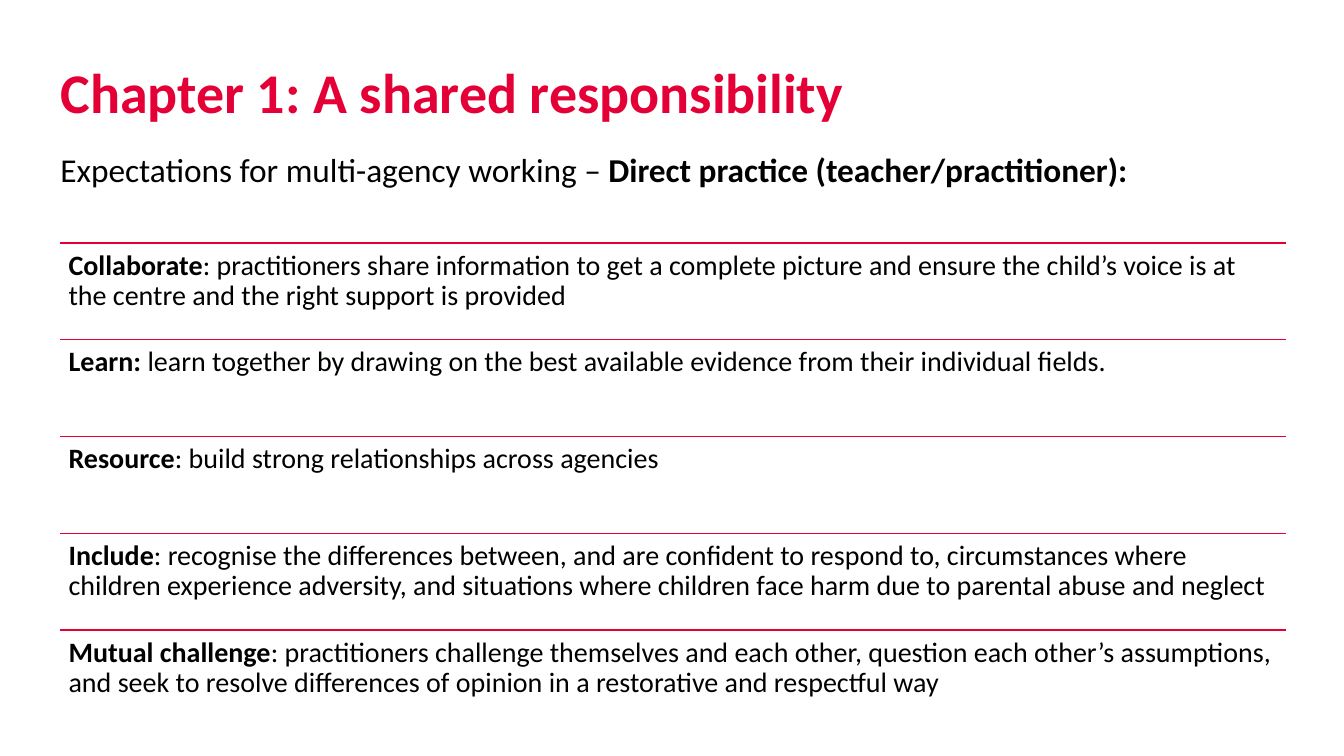
import pptx
import pptx.dml.color
import pptx.enum.shapes
import pptx.enum.text
import pptx.util
from lxml import etree
from pptx.oxml.ns import qn
from pptx.util import Inches

LEFT = 0.6
ROW_TOP, ROW_WIDTH, ROW_HEIGHT = 2.41, 12.15, 0.96

EXPECTATIONS = [
    ("Collaborate", ": practitioners share information to get a complete picture and ensure "
     "the child’s voice is at the centre and the right support is provided"),
    ("Learn: ", "learn together by drawing on the best available evidence from their "
     "individual fields."),
    ("Resource", ": build strong relationships across agencies"),
    ("Include", ": recognise the differences between, and are confident to respond to, "
     "circumstances where children experience adversity, and situations where children "
     "face harm due to parental abuse and neglect"),
    ("Mutual challenge", ": practitioners challenge themselves and each other, question "
     "each other’s assumptions, and seek to resolve differences of opinion in a "
     "restorative and respectful way"),
]


def color(value):
    return pptx.dml.color.RGBColor.from_string(value)


class SlideBuilder:
    font = "Calibri"
    accent = "E40037"
    ink = "000000"

    def __init__(self, slide):
        self.slide = slide

    def set_text(self, shape, runs, *, size, ink=None, inset=0, line_spacing=None,
                 before=0, after=0):
        """Fill a shape with one paragraph of (text, bold) runs."""
        frame = shape.text_frame
        frame.word_wrap = True
        frame.auto_size = pptx.enum.text.MSO_AUTO_SIZE.NONE
        frame.vertical_anchor = pptx.enum.text.MSO_ANCHOR.TOP
        frame.margin_left = frame.margin_right = Inches(inset)
        frame.margin_top = frame.margin_bottom = Inches(inset)
        paragraph = frame.paragraphs[0]
        paragraph.alignment = pptx.enum.text.PP_ALIGN.LEFT
        paragraph.line_spacing = line_spacing
        paragraph.space_before = pptx.util.Pt(before)
        paragraph.space_after = pptx.util.Pt(after)
        for text, bold in runs:
            run = paragraph.add_run()
            run.text = text
            run.font.name = self.font
            run.font.size = pptx.util.Pt(size)
            run.font.bold = bold
            run.font.color.rgb = color(ink or self.ink)

    def title(self, text, left, top, width, height):
        shape = self.slide.shapes.title
        shape.left, shape.top = Inches(left), Inches(top)
        shape.width, shape.height = Inches(width), Inches(height)
        self.set_text(shape, [(text, True)], size=40, ink=self.accent)

    def text(self, shapes, runs, left, top, width, height, **text_format):
        box = shapes.add_textbox(Inches(left), Inches(top), Inches(width), Inches(height))
        self.set_text(box, runs, **text_format)

    def rule(self, shapes, left, top, width):
        """Draw a horizontal accent line."""
        line = shapes.add_connector(
            pptx.enum.shapes.MSO_CONNECTOR.STRAIGHT,
            Inches(left), Inches(top), Inches(left + width), Inches(top))
        line.line.color.rgb = color(self.accent)
        line.line.width = pptx.util.Pt(1)
        etree.SubElement(line._element.spPr, qn("a:effectLst"))

    def ruled_list(self, items):
        shapes = self.slide.shapes.add_group_shape().shapes
        for index, (name, description) in enumerate(items):
            top = ROW_TOP + index * ROW_HEIGHT
            self.rule(shapes, LEFT, top, ROW_WIDTH)
            self.text(shapes, [(name, True), (description, False)],
                      LEFT, top, ROW_WIDTH, ROW_HEIGHT,
                      size=20, inset=0.08, line_spacing=0.9, after=7)


def main():
    presentation = pptx.Presentation()
    presentation.slide_width = Inches(13.33)
    presentation.slide_height = Inches(7.5)
    slide = presentation.slides.add_slide(presentation.slide_layouts[5])
    builder = SlideBuilder(slide)
    builder.text(slide.shapes,
                 [("Expectations for multi-agency working – ", False),
                  ("Direct practice (teacher/practitioner):", True)],
                 LEFT, 1.52, 11.24, 0.75,
                 size=23.8, line_spacing=0.9, before=11.3, after=11.3)
    builder.title("Chapter 1: A shared responsibility", LEFT, 0.57, 8.1, 1.16)
    builder.ruled_list(EXPECTATIONS)
    presentation.save("out.pptx")


if __name__ == "__main__":
    main()
